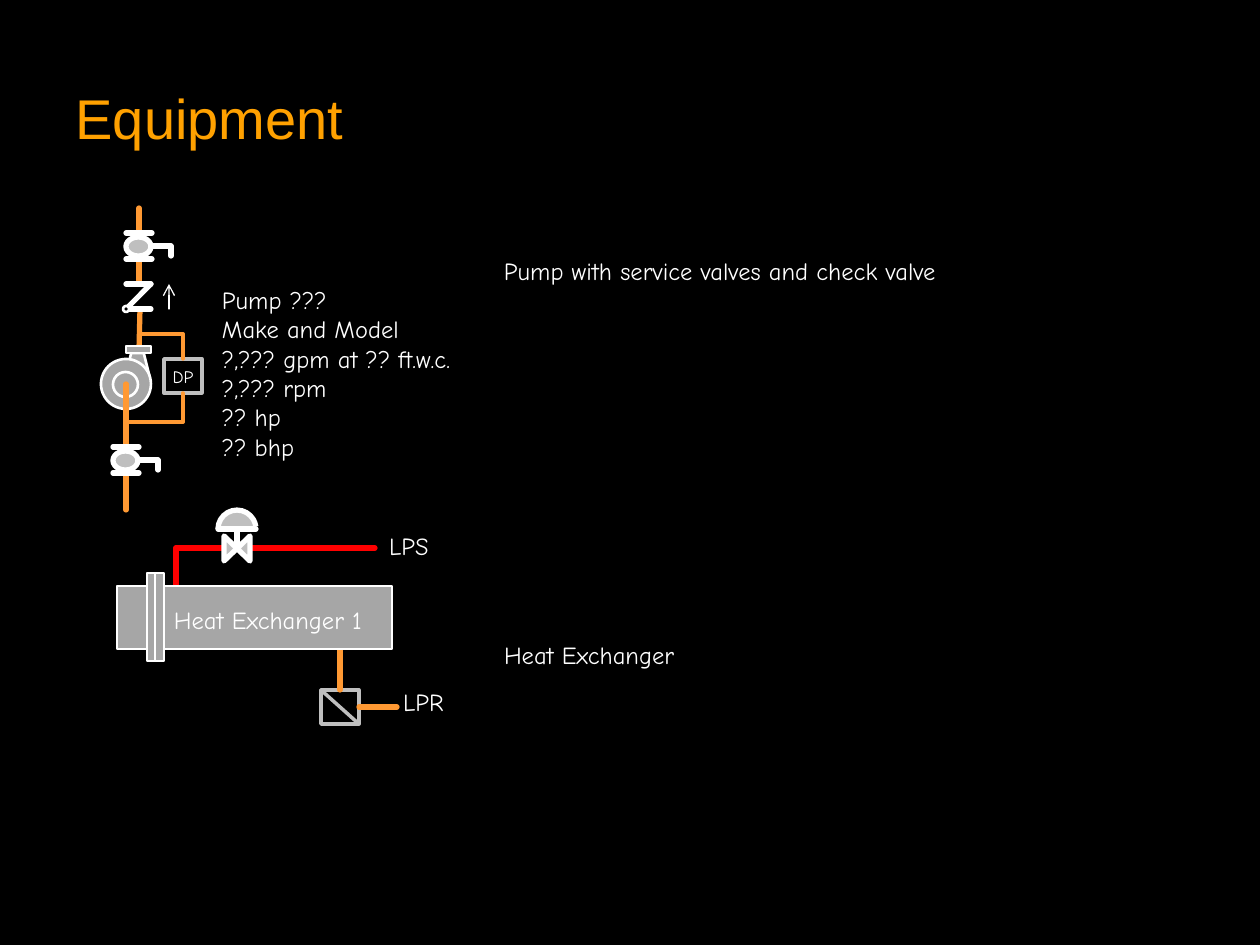
from dataclasses import dataclass

from lxml import etree
from pptx import Presentation
from pptx.dml.color import RGBColor
from pptx.enum.shapes import MSO_CONNECTOR, MSO_SHAPE
from pptx.enum.text import MSO_ANCHOR, MSO_AUTO_SIZE, PP_ALIGN
from pptx.oxml.ns import qn
from pptx.shapes.autoshape import Shape
from pptx.shapes.connector import Connector
from pptx.util import Emu, Pt

RECT, OVAL, ARC = MSO_SHAPE.RECTANGLE, MSO_SHAPE.OVAL, MSO_SHAPE.ARC
TRAPEZOID, TRIANGLE = MSO_SHAPE.TRAPEZOID, MSO_SHAPE.ISOSCELES_TRIANGLE
STRAIGHT = MSO_CONNECTOR.STRAIGHT
MIDDLE = MSO_ANCHOR.MIDDLE
LEFT, CENTER = PP_ALIGN.LEFT, PP_ALIGN.CENTER
FIT_SHAPE = MSO_AUTO_SIZE.SHAPE_TO_FIT_TEXT
TOP_SIDE, BOTTOM_SIDE, RIGHT_SIDE = 0, 2, 3

BLACK, WHITE, AMBER = "000000", "FFFFFF", "FFA100"
ORANGE, RED = "FF9933", "FF0000"
BODY_GRAY, LIGHT_GRAY = "A6A6A6", "BFBFBF"
FONT = "Comic Neue"


@dataclass(frozen=True)
class Line:
    x1: int
    y1: int
    x2: int
    y2: int
    color: str = WHITE
    width: float = 3


@dataclass(frozen=True)
class Part:
    kind: int
    x: int
    y: int
    w: int
    h: int
    fill: str | None = BODY_GRAY
    color: str = WHITE
    width: float = 1.5
    rotation: int = 0


@dataclass(frozen=True)
class Label:
    x: int
    y: int
    w: int
    h: int
    lines: tuple[str, ...]


def px(value: int) -> Emu:
    return Emu(round(value * 914400 / 126))


def rgb(color: str) -> RGBColor:
    return RGBColor.from_string(color)


def draw_line(shapes, line: Line) -> Connector:
    connector = shapes.add_connector(
        STRAIGHT, px(line.x1), px(line.y1), px(line.x2), px(line.y2))
    connector.line.color.rgb = rgb(line.color)
    connector.line.width = Pt(line.width)
    properties = connector._element.spPr
    properties.find(qn("a:ln")).set("cap", "rnd")
    etree.SubElement(properties, qn("a:effectLst"))
    return connector


def draw_lines(shapes, *lines: Line) -> None:
    for line in lines:
        draw_line(shapes, line)


def draw_part(shapes, part: Part) -> Shape:
    shape = shapes.add_shape(part.kind, px(part.x), px(part.y), px(part.w), px(part.h))
    shape.shadow.inherit = False
    shape.rotation = part.rotation
    if part.fill:
        shape.fill.solid()
        shape.fill.fore_color.rgb = rgb(part.fill)
    else:
        shape.fill.background()
    shape.line.color.rgb = rgb(part.color)
    shape.line.width = Pt(part.width)
    return shape


def add_text(paragraph, text: str, size: int, color: str = WHITE,
             font: str = FONT, align=LEFT) -> None:
    paragraph.alignment = align
    run = paragraph.add_run()
    run.text = text
    run.font.name = font
    run.font.size = Pt(size)
    run.font.color.rgb = rgb(color)


def set_margins(frame, margin: int) -> None:
    frame.margin_left = frame.margin_right = px(margin)
    frame.margin_top = frame.margin_bottom = px(margin)


def draw_label(shapes, label: Label) -> None:
    frame = shapes.add_textbox(
        px(label.x), px(label.y), px(label.w), px(label.h)).text_frame
    set_margins(frame, 0)
    frame.word_wrap = False
    frame.auto_size = FIT_SHAPE
    frame.vertical_anchor = MIDDLE
    for index, text in enumerate(label.lines):
        add_text(frame.add_paragraph() if index else frame.paragraphs[0], text, 14)


def draw_service_valve(shapes, cx: int, cy: int) -> None:
    draw_lines(
        shapes,
        Line(cx - 13, cy + 13, cx + 13, cy + 13),
        Line(cx - 13, cy - 13, cx + 13, cy - 13),
        Line(cx + 13, cy, cx + 32, cy),
        Line(cx + 32, cy, cx + 32, cy + 10))
    draw_part(shapes, Part(OVAL, cx - 13, cy - 9, 25, 19, LIGHT_GRAY, WHITE, 3))


def draw_check_valve(shapes) -> None:
    draw_lines(
        shapes,
        Line(126, 309, 151, 309),
        Line(126, 284, 151, 284),
        Line(126, 309, 151, 284))
    draw_part(shapes, Part(OVAL, 123, 306, 6, 6, BLACK))
    flow_arrow = draw_line(shapes, Line(169, 309, 169, 284, WHITE, 0.75))
    etree.SubElement(flow_arrow._element.spPr.find(qn("a:ln")),
                     qn("a:tailEnd"), type="arrow")


def draw_pump(shapes) -> None:
    draw_label(shapes, Label(222, 284, 257, 178, (
        "Pump ???", "Make and Model", "?,??? gpm at ?? ft.w.c.",
        "?,??? rpm", "?? hp", "?? bhp")))
    # Discharge piping, casing and suction piping
    draw_lines(shapes, Line(139, 350, 140, 309, ORANGE), Line(139, 284, 139, 208, ORANGE))
    for part in (Part(TRAPEZOID, 125, 353, 25, 25), Part(OVAL, 101, 359, 50, 50),
                 Part(OVAL, 113, 372, 25, 25), Part(RECT, 126, 346, 25, 7)):
        draw_part(shapes, part)
    draw_line(shapes, Line(126, 384, 126, 510, ORANGE))
    # Valves
    draw_check_valve(shapes)
    for cx, cy in ((139, 246), (126, 460)):
        draw_service_valve(shapes, cx, cy)
    # Differential pressure gauge and its taps
    gauge = draw_part(shapes, Part(RECT, 164, 359, 38, 34, None, LIGHT_GRAY, 2))
    frame = gauge.text_frame
    set_margins(frame, 6)
    frame.word_wrap = True
    frame.vertical_anchor = MIDDLE
    add_text(frame.paragraphs[0], "DP", 10, align=CENTER)
    for tap_x, tap_y, side_y, side in ((139, 334, 359, TOP_SIDE),
                                       (126, 422, 393, BOTTOM_SIDE)):
        draw_line(shapes, Line(183, tap_y, tap_x, tap_y, ORANGE, 2))
        riser = draw_line(shapes, Line(183, side_y, 183, tap_y, ORANGE, 2))
        riser.begin_connect(gauge, side)


def draw_heat_exchanger(shapes) -> None:
    # Steam supply with control valve
    draw_line(shapes, Line(176, 548, 375, 548, RED))
    for x, rotation in ((218, 90), (231, 270)):
        draw_part(shapes, Part(TRIANGLE, x, 542, 25, 13, LIGHT_GRAY, WHITE, 3, rotation))
    draw_line(shapes, Line(237, 548, 237, 529))
    actuator = draw_part(shapes, Part(ARC, 218, 510, 38, 38, LIGHT_GRAY, WHITE, 3, 270))
    actuator.adjustments[0] = 162
    actuator.adjustments[1] = 49.61
    draw_lines(shapes, Line(218, 529, 256, 529), Line(176, 586, 176, 548, RED))
    # Condensate return with steam trap
    trap = draw_part(shapes, Part(RECT, 321, 690, 38, 34, None, LIGHT_GRAY, 2))
    draw_line(shapes, Line(340, 649, 340, 690, ORANGE)).end_connect(trap, TOP_SIDE)
    draw_line(shapes, Line(359, 707, 397, 707, ORANGE)).begin_connect(trap, RIGHT_SIDE)
    draw_line(shapes, Line(321, 690, 359, 724, LIGHT_GRAY, 2))
    # Shell and flanges
    for part in (Part(RECT, 117, 586, 275, 63), Part(RECT, 147, 573, 8, 88),
                 Part(RECT, 155, 573, 9, 88)):
        draw_part(shapes, part)
    for label in (Label(174, 605, 204, 30, ("Heat Exchanger 1",)),
                  Label(389, 531, 44, 30, ("LPS",)),
                  Label(403, 687, 42, 30, ("LPR",))):
        draw_label(shapes, label)


def main() -> None:
    deck = Presentation()
    deck.slide_width, deck.slide_height = px(1260), px(945)
    slide = deck.slides.add_slide(deck.slide_layouts[5])
    slide.background.fill.solid()
    slide.background.fill.fore_color.rgb = rgb(BLACK)

    title = slide.shapes.title
    title.left, title.top, title.width, title.height = px(63), px(38), px(1134), px(158)
    title.text_frame.vertical_anchor = MIDDLE
    add_text(title.text_frame.paragraphs[0], "Equipment", 32, AMBER, "Arial")

    draw_pump(slide.shapes.add_group_shape().shapes)
    # Descriptions
    for label in (Label(504, 256, 467, 30, ("Pump with service valves and check valve",)),
                  Label(504, 640, 185, 30, ("Heat Exchanger",))):
        draw_label(slide.shapes, label)
    draw_heat_exchanger(slide.shapes.add_group_shape().shapes)

    deck.save("out.pptx")


if __name__ == "__main__":
    main()
